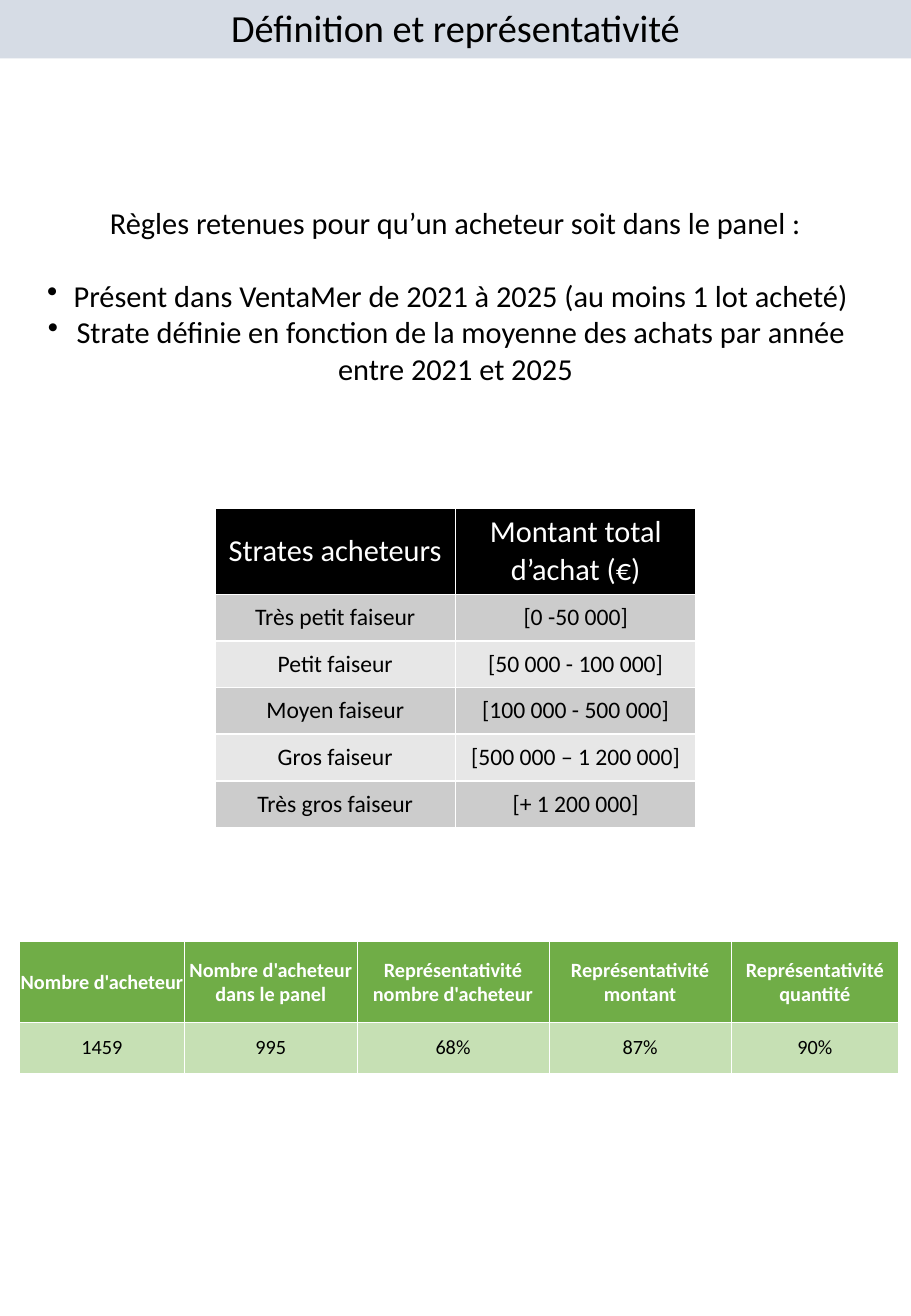
import pptx
import pptx.util
import pptx.dml.color
import pptx.enum.shapes
import pptx.enum.text
import pptx.oxml
import pptx.oxml.ns
from lxml import etree

Inches, Pt = pptx.util.Inches, pptx.util.Pt
RGB = pptx.dml.color.RGBColor.from_string
CENTER = pptx.enum.text.PP_ALIGN.CENTER
ANCHOR = pptx.enum.text.MSO_ANCHOR

TITLE = "Définition et représentativité"
RULES_INTRO = "Règles retenues pour qu’un acheteur soit dans le panel :"
RULES = [
    "Présent dans VentaMer de 2021 à 2025 (au moins 1 lot acheté)",
    "Strate définie en fonction de la moyenne des achats par année entre 2021 et 2025",
]
STRATA = [
    ("Strates acheteurs", "Montant total d’achat (€)"),
    ("Très petit faiseur", "[0 -50 000]"),
    ("Petit faiseur", "[50 000 - 100 000]"),
    ("Moyen faiseur", "[100 000 - 500 000]"),
    ("Gros faiseur", "[500 000 – 1 200 000]"),
    ("Très gros faiseur", "[+ 1 200 000]"),
]
COVERAGE = [
    ("Nombre d'acheteur", "Nombre d'acheteur dans le panel",
     "Représentativité nombre d'acheteur", "Représentativité montant",
     "Représentativité\vquantité"),
    ("1459", "995", "68%", "87%", "90%"),
]

THEME = {
    "font": "Calibri", "text": "000000", "banner": "D6DCE5", "border": "FFFFFF",
    "title": 22.7, "body": 18,
    "strata": {"head": "000000", "bands": ("CCCCCC", "E7E7E7"), "head_size": 18,
               "size": 14, "bold": False, "line": 1, "margins": (0.1, 0.05, 0.1, 0.05)},
    "coverage": {"head": "70AD47", "bands": ("C6E0B4",), "head_size": 12,
                 "size": 12, "bold": True, "line": 0.5, "margins": (0.01, 0.01, 0.01, 0)},
}


def style(p, size, color=THEME["text"], bold=False):
    p.alignment = CENTER
    f = p.font
    f.name, f.size, f.bold = THEME["font"], Pt(size), bold
    f.color.rgb = RGB(color)


def add_text(s, left, top, width, height, lines, size):
    tf = s.shapes.add_textbox(*map(Inches, (left, top, width, height))).text_frame
    tf.word_wrap = True
    for i, line in enumerate(lines):
        p = tf.paragraphs[0] if i == 0 else tf.add_paragraph()
        p.text = line
        style(p, size)
    return tf


def add_bullet(p):
    pPr = p._p.get_or_add_pPr()
    bullet = etree.Element(pptx.oxml.ns.qn("a:buChar"), char="•")
    pPr.insert_element_before(bullet, "a:tabLst", "a:defRPr", "a:extLst")


def add_borders(cell, width):
    tcPr = cell._tc.get_or_add_tcPr()
    for i, side in enumerate(("lnL", "lnR", "lnT", "lnB")):
        tcPr.insert(i, pptx.oxml.parse_xml(
            f'<a:{side} {pptx.oxml.ns.nsdecls("a")} w="{Pt(width)}"><a:solidFill>'
            f'<a:srgbClr val="{THEME["border"]}"/></a:solidFill></a:{side}>'))


def add_grid(s, left, top, widths, heights, rows, look):
    """Add a table with one header row and banded body rows."""
    frame = s.shapes.add_table(len(rows), len(widths), Inches(left), Inches(top),
                               Inches(sum(widths)), Inches(sum(heights)))
    table = frame.table
    for column, width in zip(table.columns, widths):
        column.width = Inches(width)
    for r, (values, height) in enumerate(zip(rows, heights)):
        table.rows[r].height = Inches(height)
        head = r == 0
        fill = look["head"] if head else look["bands"][(r - 1) % len(look["bands"])]
        for c, value in enumerate(values):
            cell = table.cell(r, c)
            cell.fill.solid()
            cell.fill.fore_color.rgb = RGB(fill)
            cell.vertical_anchor = ANCHOR.MIDDLE
            (cell.margin_left, cell.margin_top,
             cell.margin_right, cell.margin_bottom) = map(Inches, look["margins"])
            p = cell.text_frame.paragraphs[0]
            p.text = value
            style(p, look["head_size"] if head else look["size"],
                  THEME["border"] if head else THEME["text"], head and look["bold"])
            add_borders(cell, look["line"])


def main():
    prs = pptx.Presentation()
    prs.slide_width, prs.slide_height = Inches(7.5), Inches(10.83)
    s = prs.slides.add_slide(prs.slide_layouts[6])

    banner = s.shapes.add_shape(pptx.enum.shapes.MSO_SHAPE.RECTANGLE,
                                0, 0, prs.slide_width, Inches(0.48))
    banner.shadow.inherit = False
    banner.fill.solid()
    banner.fill.fore_color.rgb = RGB(THEME["banner"])
    banner.line.fill.background()

    strata_heights = [0.71] + [1.92 / 5] * 5
    add_grid(s, 1.77, 4.18, [1.98] * 2, strata_heights, STRATA, THEME["strata"])

    title = add_text(s, 0, 0, 7.5, 0.46, [TITLE], THEME["title"])
    title.vertical_anchor = ANCHOR.BOTTOM

    rules = add_text(s, 0.29, 1.63, 6.92, 1.92, [RULES_INTRO], THEME["body"])
    rules.paragraphs[0].space_after = Pt(21.6)
    for rule in RULES:
        p = rules.add_paragraph()
        p.text = rule
        add_bullet(p)
        style(p, THEME["body"])

    add_grid(s, 0.16, 7.75, [1.36, 1.42, 1.58, 1.5, 1.38], [0.66, 0.42],
             COVERAGE, THEME["coverage"])
    prs.save("out.pptx")


if __name__ == "__main__":
    main()
